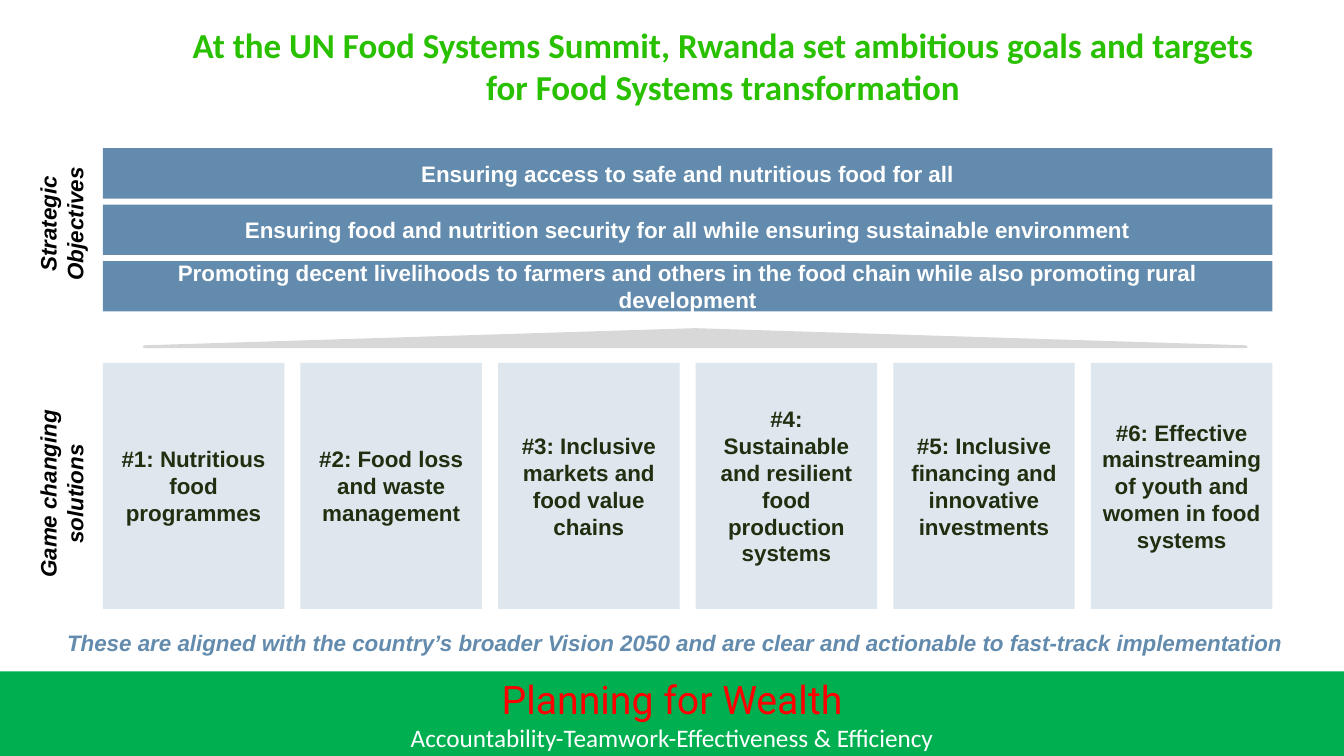
from pptx import Presentation
from pptx.dml.color import RGBColor
from pptx.enum.shapes import MSO_SHAPE
from pptx.enum.text import MSO_ANCHOR, MSO_AUTO_SIZE, PP_ALIGN
from pptx.util import Inches, Pt

RECT = MSO_SHAPE.RECTANGLE
ROUNDED = MSO_SHAPE.FLOWCHART_ALTERNATE_PROCESS
TRIANGLE = MSO_SHAPE.ISOSCELES_TRIANGLE
TOP, MIDDLE = MSO_ANCHOR.TOP, MSO_ANCHOR.MIDDLE
CENTER = PP_ALIGN.CENTER
NO_AUTOFIT = MSO_AUTO_SIZE.NONE

WHITE = RGBColor(0xFF, 0xFF, 0xFF)
BLACK = RGBColor(0, 0, 0)
RED = RGBColor(0xFF, 0, 0)
FOOTER_GREEN = RGBColor(0x00, 0xB0, 0x50)
TITLE_GREEN = RGBColor(0x29, 0xC0, 0x00)
STEEL_BLUE = RGBColor(0x63, 0x8B, 0xAD)
PALE_BLUE = RGBColor(0xDE, 0xE6, 0xEE)
DARK_GREEN = RGBColor(0x1F, 0x2F, 0x0F)
GREY = RGBColor(0xD8, 0xD8, 0xD8)

TITLE = ("At the UN Food Systems Summit, Rwanda set ambitious goals and targets "
         "for Food Systems transformation")
OBJECTIVES = [
    "Ensuring access to safe and nutritious food for all",
    "Ensuring food and nutrition security for all while ensuring sustainable environment",
    "Promoting decent livelihoods to farmers and others in the food chain "
    "while also promoting rural development",
]
SOLUTIONS = [
    "#1: Nutritious food programmes",
    "#2: Food loss and waste management",
    "#3: Inclusive markets and food value chains",
    "#4: Sustainable and resilient food production systems",
    "#5: Inclusive financing and innovative investments",
    "#6: Effective mainstreaming of youth and women in food systems",
]
CONCLUSION = ("These are aligned with the country’s broader Vision 2050 and are clear "
              "and actionable to fast-track implementation")


def format_paragraph(p, color, size=16, font="Arial", bold=True, italic=False):
    p.alignment = CENTER
    for r in p.runs:
        r.font.name = font
        r.font.size = Pt(size)
        r.font.bold = bold
        r.font.italic = italic
        r.font.color.rgb = color


def set_frame(tf, anchor):
    tf.word_wrap = True
    tf.auto_size = NO_AUTOFIT
    tf.vertical_anchor = anchor


def add_box(s, left, top, width, height, fill=None, kind=RECT):
    """Add a flat shape without outline; no fill colour leaves it clear."""
    sp = s.shapes.add_shape(kind, Inches(left), Inches(top), Inches(width), Inches(height))
    sp.shadow.inherit = False
    sp.line.fill.background()
    if fill is None:
        sp.fill.background()
    else:
        sp.fill.solid()
        sp.fill.fore_color.rgb = fill
    set_frame(sp.text_frame, MIDDLE)
    return sp


def add_text_box(s, text, color, *box, italic=False, **style):
    sp = add_box(s, *box, **style)
    sp.text_frame.text = text
    format_paragraph(sp.text_frame.paragraphs[0], color, italic=italic)


def add_footer(s, left, top, width, height):
    tf = add_box(s, left, top, width, height, FOOTER_GREEN).text_frame
    tf.text = "Planning for Wealth\nAccountability-Teamwork-Effectiveness & Efficiency"
    motto, values = tf.paragraphs
    format_paragraph(motto, RED, 28, "Roboto", bold=False)
    format_paragraph(values, WHITE, 18, "Calibri", bold=False)


def add_title(s, left, top, width, height):
    sp = s.shapes.title
    sp.left, sp.top = Inches(left), Inches(top)
    sp.width, sp.height = Inches(width), Inches(height)
    sp.text_frame.text = TITLE
    set_frame(sp.text_frame, TOP)
    format_paragraph(sp.text_frame.paragraphs[0], TITLE_GREEN, 25, "Calibri")


def add_side_label(s, text, center_x, center_y, length, thickness=0.64):
    """Add a label that reads upwards, centred on the given point."""
    sp = s.shapes.add_textbox(Inches(center_x - length / 2), Inches(center_y - thickness / 2),
                              Inches(length), Inches(thickness))
    sp.rotation = 270
    sp.text_frame.text = text
    set_frame(sp.text_frame, TOP)
    format_paragraph(sp.text_frame.paragraphs[0], BLACK, italic=True)


def add_objectives(s, left, top, width, height, gap=0.06):
    bar = (height - gap * (len(OBJECTIVES) - 1)) / len(OBJECTIVES)
    for i, text in enumerate(OBJECTIVES):
        add_text_box(s, text, WHITE, left, top + i * (bar + gap), width, bar, STEEL_BLUE)


def add_solutions(s, left, top, width, height, gap=0.16):
    card = (width - gap * (len(SOLUTIONS) - 1)) / len(SOLUTIONS)
    for i, text in enumerate(SOLUTIONS):
        add_text_box(s, text, DARK_GREEN, left + i * (card + gap), top, card, height, PALE_BLUE)


def add_roof(s, left, top, width, height):
    sp = add_box(s, left, top, width, height, GREY, TRIANGLE)
    sp.line.color.rgb = GREY
    sp.line.width = Pt(2)


def main():
    prs = Presentation()
    prs.slide_width, prs.slide_height = Inches(13.33), Inches(7.5)
    s = prs.slides.add_slide(prs.slide_layouts[5])
    add_footer(s, 0, 6.66, 13.33, 0.84)
    add_title(s, 1.57, 0.18, 11.2, 1.12)
    add_side_label(s, "Strategic Objectives", 0.61, 2.22, 2.14)
    add_objectives(s, 1.02, 1.47, 11.6, 1.62)
    add_roof(s, 1.43, 3.27, 10.93, 0.17)
    add_side_label(s, "Game changing solutions", 0.61, 4.9, 2.7)
    add_solutions(s, 1.02, 3.6, 11.6, 2.44)
    add_text_box(s, CONCLUSION, STEEL_BLUE, 0.45, 6.18, 12.49, 0.4, kind=ROUNDED, italic=True)
    prs.save("out.pptx")


if __name__ == "__main__":
    main()
